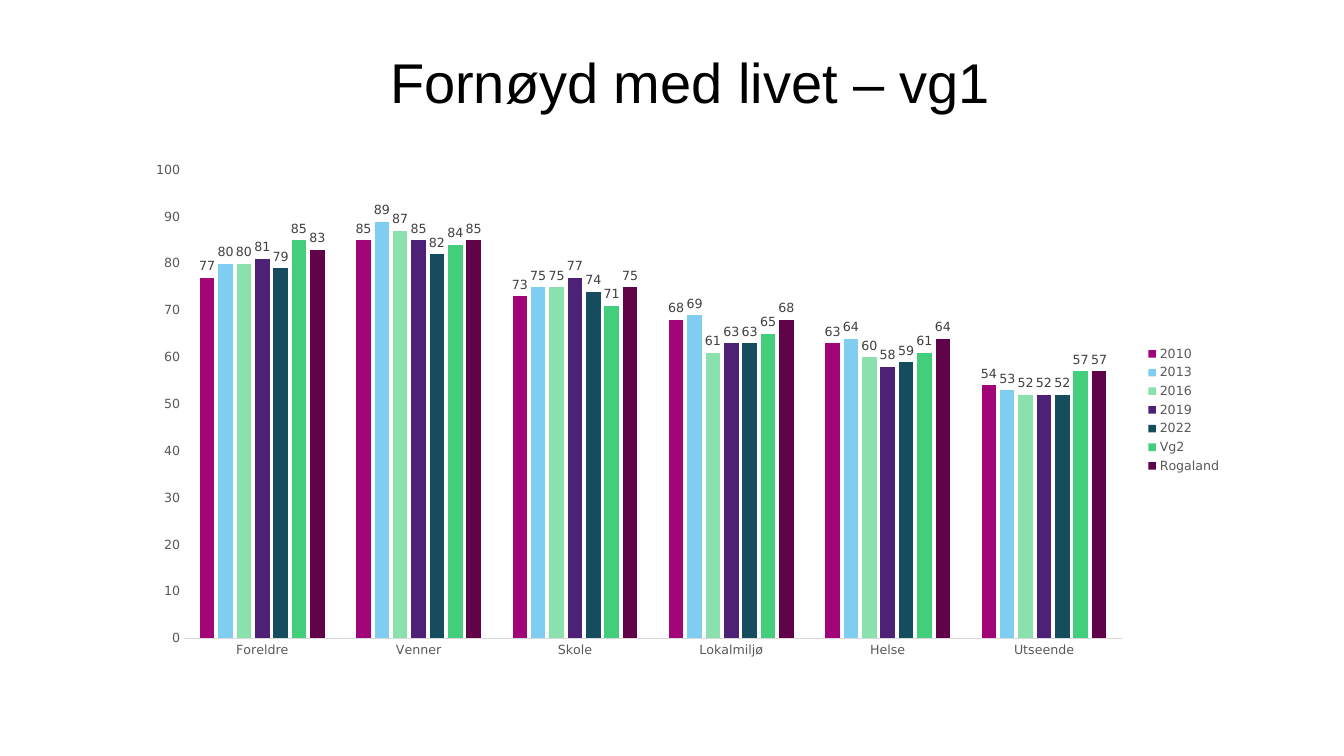
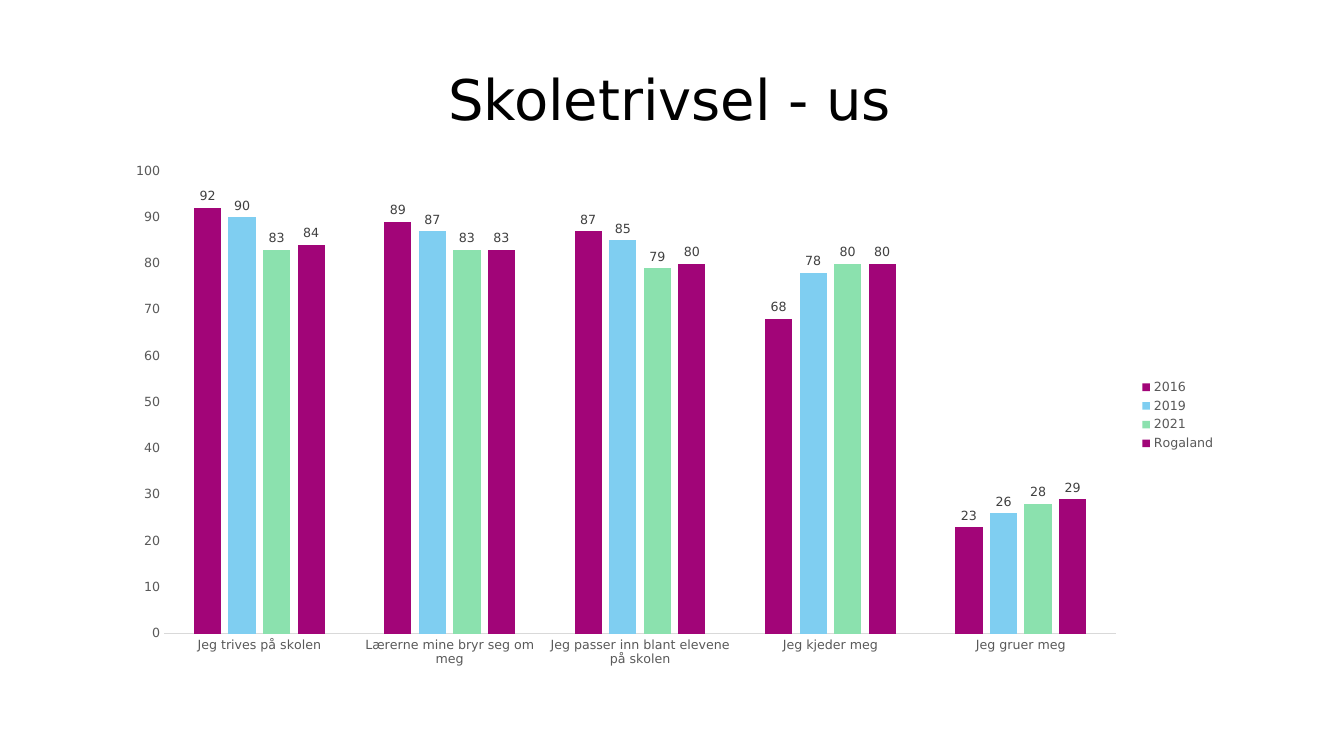
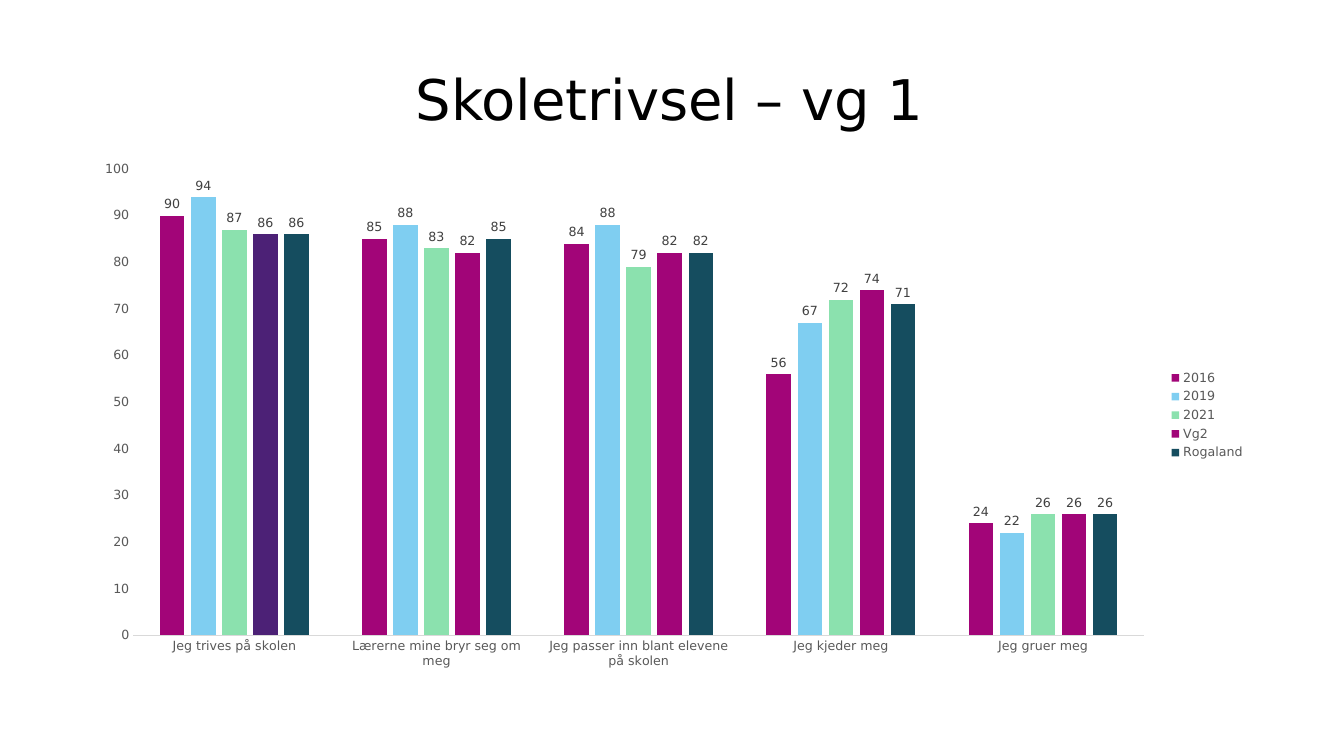
import pptx
import pptx.chart.data
import pptx.dml.color
import pptx.enum.chart
import pptx.enum.text
import pptx.util

Cm = pptx.util.Cm
Pt = pptx.util.Pt

TITLE_ONLY_LAYOUT = 5
BODY_FONT = "DejaVu Sans"
BLACK, AXIS_TEXT, LABEL_TEXT, AXIS_LINE = "000000", "595959", "404040", "D9D9D9"
MAGENTA, SKY, MINT, PURPLE = "A20578", "7FCEF1", "8BE1AE", "4C2176"
TEAL, GREEN, PLUM, ROSE = "154D5F", "43CE7C", "610348", "A10578"

LIFE_AREAS = ["Foreldre", "Venner", "Skole", "Lokalmiljø", "Helse", "Utseende"]
SCHOOL_STATEMENTS = [
    "Jeg trives på skolen",
    "Lærerne mine bryr seg om meg",
    "Jeg passer inn blant elevene på skolen",
    "Jeg kjeder meg",
    "Jeg gruer meg",
]
SCHOOL_TITLE_AREA = (2.87, 0.71, 28.02, 2.74)


def color(hex_text):
    return pptx.dml.color.RGBColor.from_string(hex_text)


def paint(fill, hex_text):
    fill.solid()
    fill.fore_color.rgb = color(hex_text)


def format_font(font, size, hex_text, name=BODY_FONT):
    font.name = name
    font.size = Pt(size)
    font.bold = False
    font.color.rgb = color(hex_text)


def set_text(frame, text, *, size=40, hex_text=BLACK, font=BODY_FONT,
             align=pptx.enum.text.PP_ALIGN.CENTER, spacing=1.1):
    para = frame.paragraphs[0]
    para.alignment = align
    para.line_spacing = spacing
    span = para.add_run()
    span.text = text
    format_font(span.font, size, hex_text, font)


class SurveyDeck:
    def __init__(self):
        self.deck = pptx.Presentation()
        self.deck.slide_width = Cm(33.87)
        self.deck.slide_height = Cm(19.05)
        self.page = None

    def add_page(self):
        layout = self.deck.slide_layouts[TITLE_ONLY_LAYOUT]
        self.page = self.deck.slides.add_slide(layout)

    def title(self, text, area, font=BODY_FONT):
        box = self.page.shapes.title
        box.left, box.top, box.width, box.height = map(Cm, area)
        frame = box.text_frame
        frame.word_wrap = True
        frame.auto_size = pptx.enum.text.MSO_AUTO_SIZE.NONE
        frame.vertical_anchor = pptx.enum.text.MSO_ANCHOR.BOTTOM
        set_text(frame, text, font=font)

    def column_chart(self, area, categories, series_rows):
        """Draw clustered columns from rows of (name, colour, values)."""
        data = pptx.chart.data.CategoryChartData()
        data.categories = categories
        for name, _, values in series_rows:
            data.add_series(name, values)
        chart_type = pptx.enum.chart.XL_CHART_TYPE.COLUMN_CLUSTERED
        chart = self.page.shapes.add_chart(chart_type, *map(Cm, area), data).chart
        chart.has_title = False
        format_font(chart.font, 10, BLACK)
        self.style_axes(chart)
        self.style_legend(chart)

        plot = chart.plots[0]
        plot.vary_by_categories = False
        plot.gap_width = 219
        plot.overlap = -27
        for series, (_, hex_text, _) in zip(plot.series, series_rows):
            paint(series.format.fill, hex_text)
            series.invert_if_negative = False
            labels = series.data_labels
            labels.show_value = True
            labels.position = pptx.enum.chart.XL_LABEL_POSITION.OUTSIDE_END
            format_font(labels.font, 9, LABEL_TEXT)
        return chart

    def style_axes(self, chart):
        for axis in (chart.category_axis, chart.value_axis):
            axis.has_major_gridlines = False
            axis.major_tick_mark = pptx.enum.chart.XL_TICK_MARK.NONE
            axis.minor_tick_mark = pptx.enum.chart.XL_TICK_MARK.NONE
            format_font(axis.tick_labels.font, 9, AXIS_TEXT)
        baseline = chart.category_axis.format.line
        baseline.width = Pt(0.75)
        paint(baseline.fill, AXIS_LINE)
        scale = chart.value_axis
        scale.minimum_scale, scale.maximum_scale, scale.major_unit = 0, 100, 10
        scale.format.line.fill.background()

    def style_legend(self, chart):
        chart.has_legend = True
        chart.legend.position = pptx.enum.chart.XL_LEGEND_POSITION.RIGHT
        chart.legend.include_in_layout = False
        format_font(chart.legend.font, 9, AXIS_TEXT)


def life_satisfaction(survey):
    survey.add_page()
    survey.title("Fornøyd med livet – vg1", (3.38, 0.05, 28.02, 2.97), "Arial")
    survey.column_chart((3.38, 3.84, 27.66, 12.98), LIFE_AREAS, [
        ("2010", MAGENTA, (77, 85, 73, 68, 63, 54)),
        ("2013", SKY, (80, 89, 75, 69, 64, 53)),
        ("2016", MINT, (80, 87, 75, 61, 60, 52)),
        ("2019", PURPLE, (81, 85, 77, 63, 58, 52)),
        ("2022", TEAL, (79, 82, 74, 63, 59, 52)),
        ("Vg2", GREEN, (85, 84, 71, 65, 61, 57)),
        ("Rogaland", PLUM, (83, 85, 75, 68, 64, 57)),
    ])


def lower_secondary_wellbeing(survey):
    survey.add_page()
    survey.title("Skoletrivsel - us", SCHOOL_TITLE_AREA)
    survey.column_chart((2.87, 3.86, 28.02, 13.21), SCHOOL_STATEMENTS, [
        ("2016", MAGENTA, (92, 89, 87, 68, 23)),
        ("2019", SKY, (90, 87, 85, 78, 26)),
        ("2021", MINT, (83, 83, 79, 80, 28)),
        ("Rogaland", ROSE, (84, 83, 80, 80, 29)),
    ])


def upper_secondary_wellbeing(survey):
    survey.add_page()
    survey.title("Skoletrivsel – vg 1", SCHOOL_TITLE_AREA)
    chart = survey.column_chart((2.06, 3.81, 29.57, 13.31), SCHOOL_STATEMENTS, [
        ("2016", MAGENTA, (90, 85, 84, 56, 24)),
        ("2019", SKY, (94, 88, 88, 67, 22)),
        ("2021", MINT, (87, 83, 79, 72, 26)),
        ("Vg2", ROSE, (86, 82, 82, 74, 26)),
        ("Rogaland", TEAL, (86, 85, 82, 71, 26)),
    ])
    vg2_series = chart.plots[0].series[3]
    paint(vg2_series.points[0].format.fill, PURPLE)


def main():
    survey = SurveyDeck()
    life_satisfaction(survey)
    lower_secondary_wellbeing(survey)
    upper_secondary_wellbeing(survey)
    survey.deck.save("out.pptx")


if __name__ == "__main__":
    main()
